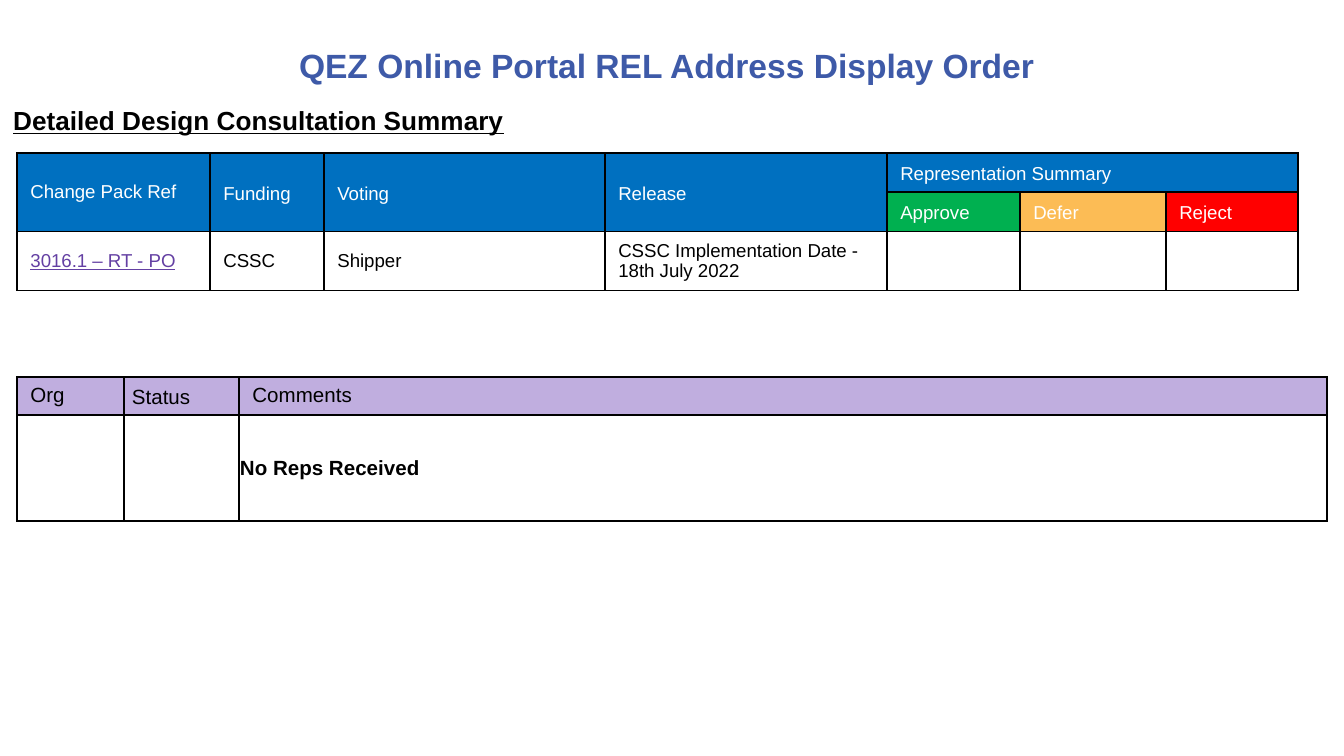
from lxml import etree
from pptx import Presentation
from pptx.dml.color import RGBColor
from pptx.enum.text import MSO_ANCHOR, PP_ALIGN
from pptx.oxml.ns import qn
from pptx.util import Pt

PX = 914400 / 134.4

BLACK = RGBColor(0x00, 0x00, 0x00)
WHITE = RGBColor(0xFF, 0xFF, 0xFF)
TITLE_BLUE = RGBColor(0x3E, 0x5A, 0xA8)
HEADER_BLUE = RGBColor(0x00, 0x70, 0xC0)
GREEN = RGBColor(0x00, 0xB0, 0x50)
AMBER = RGBColor(0xFC, 0xBC, 0x55)
RED = RGBColor(0xFF, 0x00, 0x00)
LINK_PURPLE = RGBColor(0x64, 0x40, 0xA3)
LILAC = RGBColor(0xC0, 0xAE, 0xDF)

TITLE = "QEZ Online Portal REL Address Display Order "
SUBTITLE = "Detailed Design Consultation Summary"


def header(text, fill=HEADER_BLUE, spacing=1.15):
    return {"text": text, "fill": fill, "color": WHITE, "spacing": spacing}


SUMMARY = {
    "origin": (17, 153),
    "columns": [193, 114, 281, 282, 133, 146, 132],
    "rows": [39, 39, 59],
    "size": 10,
    "merges": [((0, c), (1, c)) for c in range(4)] + [((0, 4), (0, 6))],
    "cells": [
        [header("Change Pack Ref", spacing=None), header("Funding"), header("Voting"),
         header("Release"), header("Representation Summary"), {}, {}],
        [{}, {}, {}, {}, header("Approve", GREEN), header("Defer", AMBER),
         header("Reject", RED)],
        [{"text": "3016.1 – RT - PO", "color": LINK_PURPLE, "underline": True},
         {"text": "CSSC"}, {"text": "Shipper"},
         {"text": "CSSC Implementation Date - 18th July 2022"}, {}, {}, {}],
    ],
}

COMMENTS = {
    "origin": (17, 377),
    "columns": [107, 115, 1088],
    "rows": [38, 106],
    "size": 11,
    "merges": [],
    "cells": [
        [{"text": "Org", "fill": LILAC, "anchor": MSO_ANCHOR.TOP},
         {"text": "Status", "fill": LILAC, "spacing": 1.15, "insets": (8, 0, 8, 0)},
         {"text": "Comments", "fill": LILAC, "anchor": MSO_ANCHOR.TOP}],
        [{}, {}, {"text": "No Reps Received", "bold": True, "insets": (1, 1, 1, 0)}],
    ],
}


def px(length):
    return round(length * PX)


def write(frame, text, size=10, color=BLACK, bold=False, underline=False,
          align=PP_ALIGN.LEFT, spacing=None):
    paragraph = frame.paragraphs[0]
    paragraph.alignment = align
    if spacing:
        paragraph.line_spacing = spacing
    if not text:
        paragraph._p.get_or_add_endParaRPr().set("sz", str(size * 100))
        return
    run = paragraph.add_run()
    run.text = text
    run.font.name = "Arial"
    run.font.size = Pt(size)
    run.font.bold = bold
    run.font.underline = underline
    run.font.color.rgb = color


def add_borders(cell):
    properties = cell._tc.get_or_add_tcPr()
    for side in ("lnL", "lnR", "lnT", "lnB"):
        line = etree.SubElement(properties, qn(f"a:{side}"), w=str(Pt(1)))
        fill = etree.SubElement(line, qn("a:solidFill"))
        etree.SubElement(fill, qn("a:srgbClr"), val=str(BLACK))


def format_cell(cell, text="", fill=None, anchor=MSO_ANCHOR.MIDDLE, insets=None, **font):
    add_borders(cell)
    if fill is None:
        cell.fill.background()
    else:
        cell.fill.solid()
        cell.fill.fore_color.rgb = fill
    cell.vertical_anchor = anchor
    if insets:
        (cell.margin_left, cell.margin_top,
         cell.margin_right, cell.margin_bottom) = map(px, insets)
    write(cell.text_frame, text, **font)


def add_grid(slide, content):
    columns, rows = content["columns"], content["rows"]
    left, top = content["origin"]
    table = slide.shapes.add_table(len(rows), len(columns), px(left), px(top),
                                   px(sum(columns)), px(sum(rows))).table
    table.first_row = False
    table.horz_banding = False
    for column, width in zip(table.columns, columns):
        column.width = px(width)
    for row, height in zip(table.rows, rows):
        row.height = px(height)
    for r, line in enumerate(content["cells"]):
        for c, entry in enumerate(line):
            format_cell(table.cell(r, c), size=content["size"], **entry)
    for first, last in content["merges"]:
        table.cell(*first).merge(table.cell(*last))


def main():
    deck = Presentation()
    deck.slide_width, deck.slide_height = px(1344), px(756)
    slide = deck.slides.add_slide(deck.slide_layouts[5])

    title = slide.shapes.title
    title.left, title.top, title.width, title.height = map(px, (8, 5, 1327, 120))
    title.text_frame.vertical_anchor = MSO_ANCHOR.MIDDLE
    write(title.text_frame, TITLE, size=18, color=TITLE_BLUE, bold=True,
          align=PP_ALIGN.CENTER)

    subtitle = slide.shapes.add_textbox(*map(px, (0, 98, 641, 46))).text_frame
    subtitle.word_wrap = True
    write(subtitle, SUBTITLE, size=14, bold=True, underline=True)

    for content in (SUMMARY, COMMENTS):
        add_grid(slide, content)
    deck.save("out.pptx")


if __name__ == "__main__":
    main()
